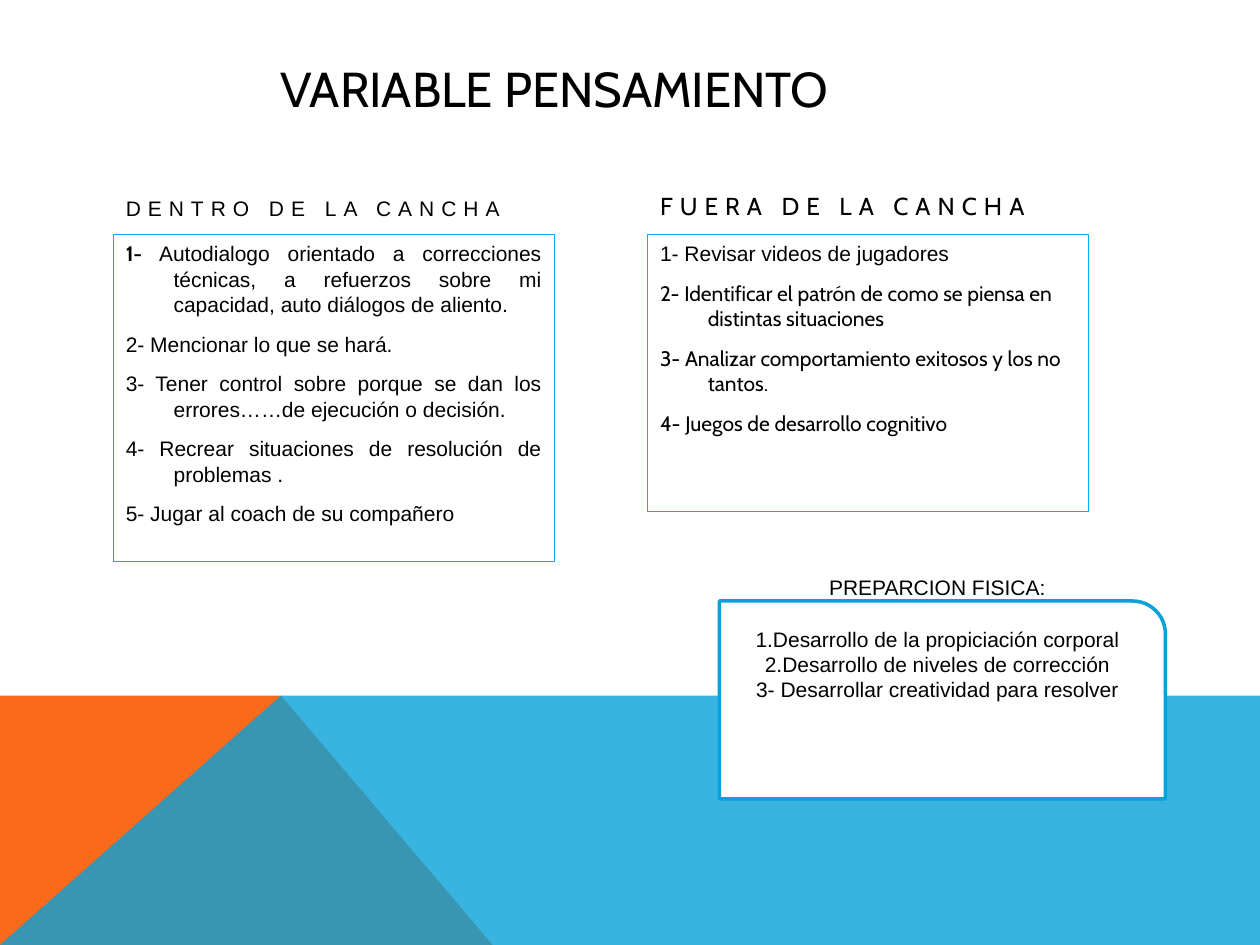
from pptx import Presentation
from pptx.dml.color import RGBColor
from pptx.enum.shapes import MSO_SHAPE
from pptx.enum.text import MSO_ANCHOR, PP_ALIGN
from pptx.oxml.ns import qn
from pptx.util import Inches, Pt
from lxml import etree

RECT, ROUND_CORNER = MSO_SHAPE.RECTANGLE, MSO_SHAPE.ROUND_1_RECTANGLE
TOP, MIDDLE, BOTTOM = MSO_ANCHOR.TOP, MSO_ANCHOR.MIDDLE, MSO_ANCHOR.BOTTOM
LEFT, CENTER, JUSTIFY = PP_ALIGN.LEFT, PP_ALIGN.CENTER, PP_ALIGN.JUSTIFY

BLACK = RGBColor(0x00, 0x00, 0x00)
WHITE = RGBColor(0xFF, 0xFF, 0xFF)
ORANGE = RGBColor(0xF9, 0x6A, 0x1B)
BLUE = RGBColor(0x08, 0xA1, 0xD9)
SKY = RGBColor(0x00, 0xB0, 0xF0)
ARIAL, CABIN = "Arial", "Cabin"

COLS, ROWS = 100, 75
LEFT_COL, RIGHT_COL, COL_W = 9, 51.4, 35
HEAD_ROW, BODY_ROW, HEAD_H = 12, 18.6, 6
BAND_ROW, PEAK_COL = 55.2, 22.3

INSIDE = [
    [("1- ", CABIN, True),
     ("Autodialogo orientado a correcciones técnicas, a refuerzos sobre mi "
      "capacidad, auto diálogos de aliento.", ARIAL, False)],
    [("2- Mencionar lo que se hará.", ARIAL, False)],
    [("3- Tener control sobre porque se dan los errores……de ejecución o decisión.",
      ARIAL, False)],
    [("4- Recrear situaciones de resolución de problemas .", ARIAL, False)],
    [("5- Jugar al coach de su compañero", ARIAL, False)],
]
OUTSIDE = [
    [("1- Revisar videos de jugadores", ARIAL, False)],
    [("2- Identificar el patrón de como se piensa en distintas situaciones",
      CABIN, False)],
    [("3- Analizar comportamiento exitosos y los no tantos.", CABIN, False)],
    [("4- Juegos de desarrollo cognitivo", CABIN, False)],
]
TRAINING = [
    "1.Desarrollo de la propiciación corporal",
    "2.Desarrollo de niveles de corrección",
    "3- Desarrollar creatividad para resolver",
]


def write(sp, paragraphs, size=12, font=ARIAL, align=LEFT, anchor=TOP, tracking=0,
          margin=0, hanging=0, before=0, leading=None):
    tf = sp.text_frame
    tf.word_wrap = True
    tf.vertical_anchor = anchor
    for i, runs in enumerate(paragraphs):
        p = tf.add_paragraph() if i else tf.paragraphs[0]
        p.alignment = align
        p.space_before = Pt(before)
        if leading:
            p.line_spacing = Pt(leading)
        if margin:
            pPr = p._p.get_or_add_pPr()
            pPr.set("marL", str(Inches(margin)))
            pPr.set("indent", str(Inches(-hanging)))
        if isinstance(runs, str):
            runs = [(runs, font, False)]
        for text, face, bold in runs:
            r = p.add_run()
            r.text = text
            r.font.name = face
            r.font.size = Pt(size)
            r.font.bold = bold
            r.font.color.rgb = BLACK
            if tracking:
                r._r.get_or_add_rPr().set("spc", str(tracking * 100))


class Deck:
    def __init__(self):
        self.prs = Presentation()
        self.prs.slide_width, self.prs.slide_height = Inches(10), Inches(7.5)
        self.s = self.prs.slides.add_slide(self.prs.slide_layouts[6])

    def x(self, cols):
        return round(self.prs.slide_width * cols / COLS)

    def y(self, rows):
        return round(self.prs.slide_height * rows / ROWS)

    def box(self, col, row, w, h):
        return self.x(col), self.y(row), self.x(w), self.y(h)

    def text(self, place, content, **style):
        write(self.s.shapes.add_textbox(*self.box(*place)), [content], **style)

    def panel(self, place, paragraphs, shape=RECT, fill=None, line=SKY, weight=0.75,
              inset=0.05, **style):
        sp = self.s.shapes.add_shape(shape, *self.box(*place))
        sp.shadow.inherit = False
        if fill is None:
            sp.fill.background()
        else:
            sp.fill.solid()
            sp.fill.fore_color.rgb = fill
        sp.line.color.rgb = line
        sp.line.width = Pt(weight)
        sp.text_frame.margin_top = Inches(inset)
        write(sp, paragraphs, **style)

    def polygon(self, points, color, opacity=100):
        start, *rest = [(self.x(c), self.y(r)) for c, r in points]
        builder = self.s.shapes.build_freeform(*start)
        builder.add_line_segments(rest, close=True)
        sp = builder.convert_to_shape()
        sp.shadow.inherit = False
        sp.fill.solid()
        sp.fill.fore_color.rgb = color
        sp.line.fill.background()
        if opacity < 100:
            clr = sp._element.spPr.find(qn("a:solidFill")).find(qn("a:srgbClr"))
            etree.SubElement(clr, qn("a:alpha")).set("val", str(opacity * 1000))


def main():
    deck = Deck()
    peak = (PEAK_COL, BAND_ROW)
    deck.polygon([(0, ROWS), (0, BAND_ROW), peak, (39.1, ROWS)], ORANGE)
    deck.polygon([(0, ROWS), peak, (COLS, BAND_ROW), (COLS, ROWS)], BLUE, opacity=80)

    deck.text((LEFT_COL, 4, 82.2, 6), "VARIABLE PENSAMIENTO", size=28, font=CABIN,
              anchor=MIDDLE, margin=1.23)

    columns = [
        (LEFT_COL, "DENTRO DE LA CANCHA", ARIAL, 12, INSIDE, 26, JUSTIFY),
        (RIGHT_COL, "FUERA DE LA CANCHA", CABIN, 14, OUTSIDE, 22, LEFT),
    ]
    for col, heading, font, size, items, height, align in columns:
        deck.text((col, HEAD_ROW, COL_W, HEAD_H), heading, size=size, font=font,
                  anchor=BOTTOM, tracking=4, before=8)
        deck.panel((col, BODY_ROW, COL_W, height), items, align=align,
                   margin=0.38, hanging=0.38, before=8, leading=14.57)

    deck.panel((57.1, 47.7, 35.4, 15.7), TRAINING, shape=ROUND_CORNER, fill=WHITE,
               line=BLUE, weight=2, inset=0.2, align=CENTER, leading=14.4)
    deck.text((57.1, 45.1, 34.6, 3), "PREPARCION FISICA:", align=CENTER, leading=14.4)

    deck.prs.save("out.pptx")


if __name__ == "__main__":
    main()
